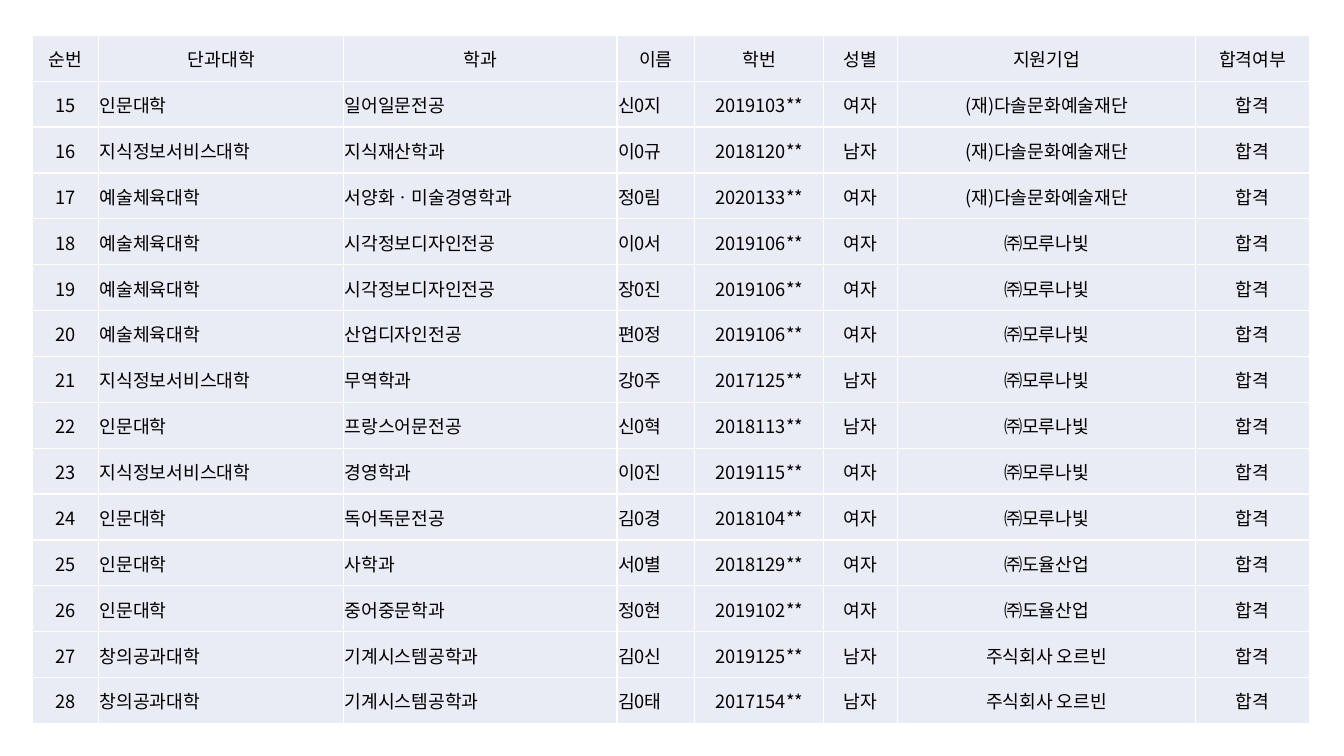
import dataclasses

import lxml.etree
import pptx
import pptx.dml.color
import pptx.enum.text
import pptx.oxml.ns
import pptx.util

PX = 9144
FIRST_NUMBER = 15
RESULT = "합격"
COLUMN_WIDTHS = [66, 243, 271, 77, 128, 73, 296, 113]
LEFT_COLUMNS = {1, 2, 3}
HEADINGS = ["순번", "단과대학", "학과", "이름", "학번", "성별", "지원기업", "합격여부"]

HUMANITIES = "인문대학"
INFORMATION = "지식정보서비스대학"
ARTS = "예술체육대학"
ENGINEERING = "창의공과대학"
FOUNDATION = "(재)다솔문화예술재단"
STUDIO = "㈜모루나빛"
INDUSTRY = "㈜도율산업"
FACTORY = "주식회사 오르빈"

APPLICANTS = [
    (HUMANITIES, "일어일문전공", "신0지", "2019103**", "여자", FOUNDATION),
    (INFORMATION, "지식재산학과", "이0규", "2018120**", "남자", FOUNDATION),
    (ARTS, "서양화ㆍ미술경영학과", "정0림", "2020133**", "여자", FOUNDATION),
    (ARTS, "시각정보디자인전공", "이0서", "2019106**", "여자", STUDIO),
    (ARTS, "시각정보디자인전공", "장0진", "2019106**", "여자", STUDIO),
    (ARTS, "산업디자인전공", "편0정", "2019106**", "여자", STUDIO),
    (INFORMATION, "무역학과", "강0주", "2017125**", "남자", STUDIO),
    (HUMANITIES, "프랑스어문전공", "신0혁", "2018113**", "남자", STUDIO),
    (INFORMATION, "경영학과", "이0진", "2019115**", "여자", STUDIO),
    (HUMANITIES, "독어독문전공", "김0경", "2018104**", "여자", STUDIO),
    (HUMANITIES, "사학과", "서0별", "2018129**", "여자", INDUSTRY),
    (HUMANITIES, "중어중문학과", "정0현", "2019102**", "여자", INDUSTRY),
    (ENGINEERING, "기계시스템공학과", "김0신", "2019125**", "남자", FACTORY),
    (ENGINEERING, "기계시스템공학과", "김0태", "2017154**", "남자", FACTORY),
]


@dataclasses.dataclass(frozen=True)
class Theme:
    font: str = "Noto Sans CJK KR"
    text_size: int = 13
    text: str = "000000"
    cell: str = "E9EBF5"
    border: str = "FFFFFF"
    border_width: int = 1


THEME = Theme()


def px(length):
    return pptx.util.Emu(length * PX)


def rgb(value):
    return pptx.dml.color.RGBColor.from_string(value)


def add_child(parent, tag, **attributes):
    return lxml.etree.SubElement(parent, pptx.oxml.ns.qn(tag), attributes)


def set_borders(cell):
    properties = cell._tc.get_or_add_tcPr()
    width = str(pptx.util.Pt(THEME.border_width))
    for side in ("a:lnL", "a:lnR", "a:lnT", "a:lnB"):
        line = add_child(properties, side, w=width)
        fill = add_child(line, "a:solidFill")
        add_child(fill, "a:srgbClr", val=THEME.border)


def set_text(cell, text, alignment):
    para = cell.text_frame.paragraphs[0]
    para.alignment = alignment
    span = para.add_run()
    span.text = text
    span.font.size = pptx.util.Pt(THEME.text_size)
    span.font.bold = False
    span.font.color.rgb = rgb(THEME.text)
    span.font.name = THEME.font
    add_child(span._r.get_or_add_rPr(), "a:ea", typeface=THEME.font)


def style_cell(cell):
    cell.vertical_anchor = pptx.enum.text.MSO_ANCHOR.MIDDLE
    cell.margin_left = cell.margin_right = cell.margin_top = px(1)
    cell.margin_bottom = px(0)
    set_borders(cell)
    cell.fill.solid()
    cell.fill.fore_color.rgb = rgb(THEME.cell)


def add_results_table(page, rows, left, top, height):
    frame = page.shapes.add_table(
        len(rows), len(COLUMN_WIDTHS), px(left), px(top), px(sum(COLUMN_WIDTHS)), px(height)
    )
    table = frame.table
    table.horz_banding = False
    for column, width in zip(table.columns, COLUMN_WIDTHS):
        column.width = px(width)
    align = pptx.enum.text.PP_ALIGN
    for row_index, row in enumerate(rows):
        for column_index, text in enumerate(row):
            cell = table.cell(row_index, column_index)
            style_cell(cell)
            is_left = row_index > 0 and column_index in LEFT_COLUMNS
            set_text(cell, text, align.LEFT if is_left else align.CENTER)


def main():
    deck = pptx.Presentation()
    deck.slide_width = px(1333)
    deck.slide_height = px(750)
    page = deck.slides.add_slide(deck.slide_layouts[6])
    rows = [HEADINGS]
    for number, applicant in enumerate(APPLICANTS, FIRST_NUMBER):
        rows.append([str(number), *applicant, RESULT])
    add_results_table(page, rows, left=32, top=35, height=683)
    deck.save("out.pptx")


if __name__ == "__main__":
    main()
